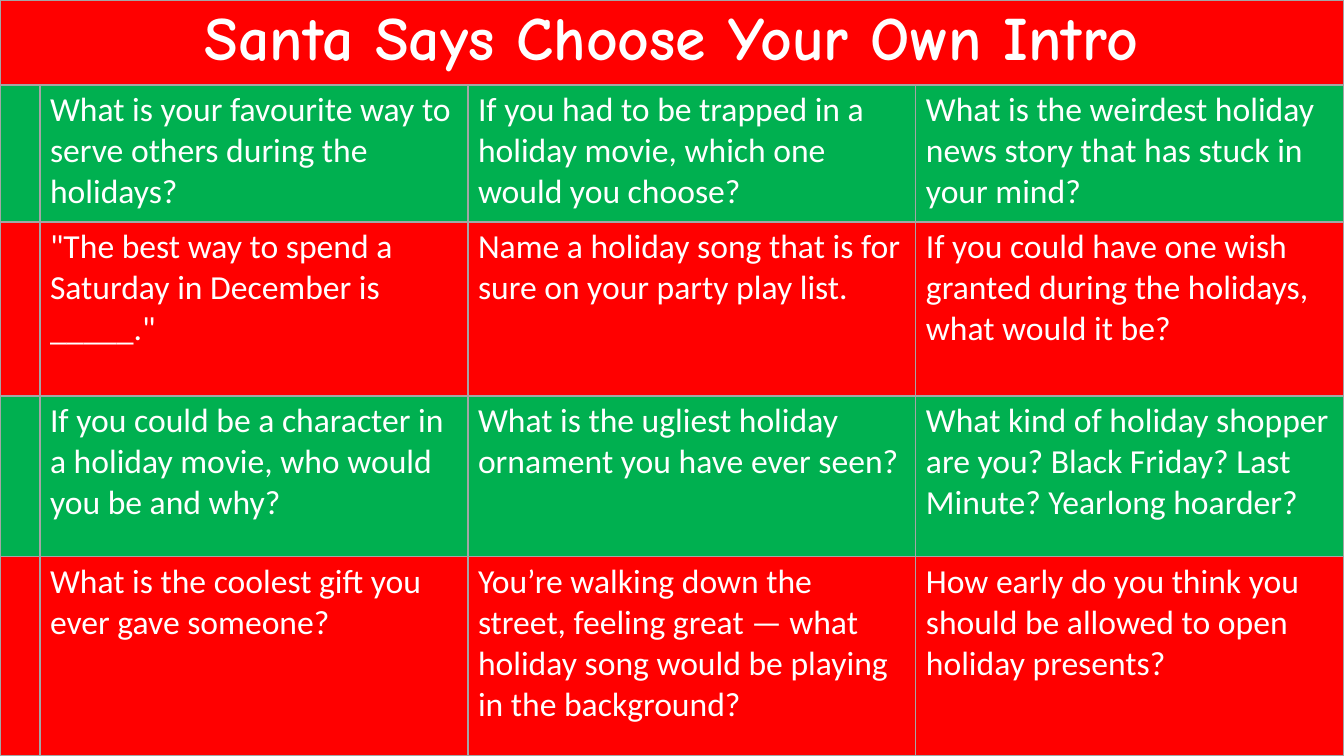
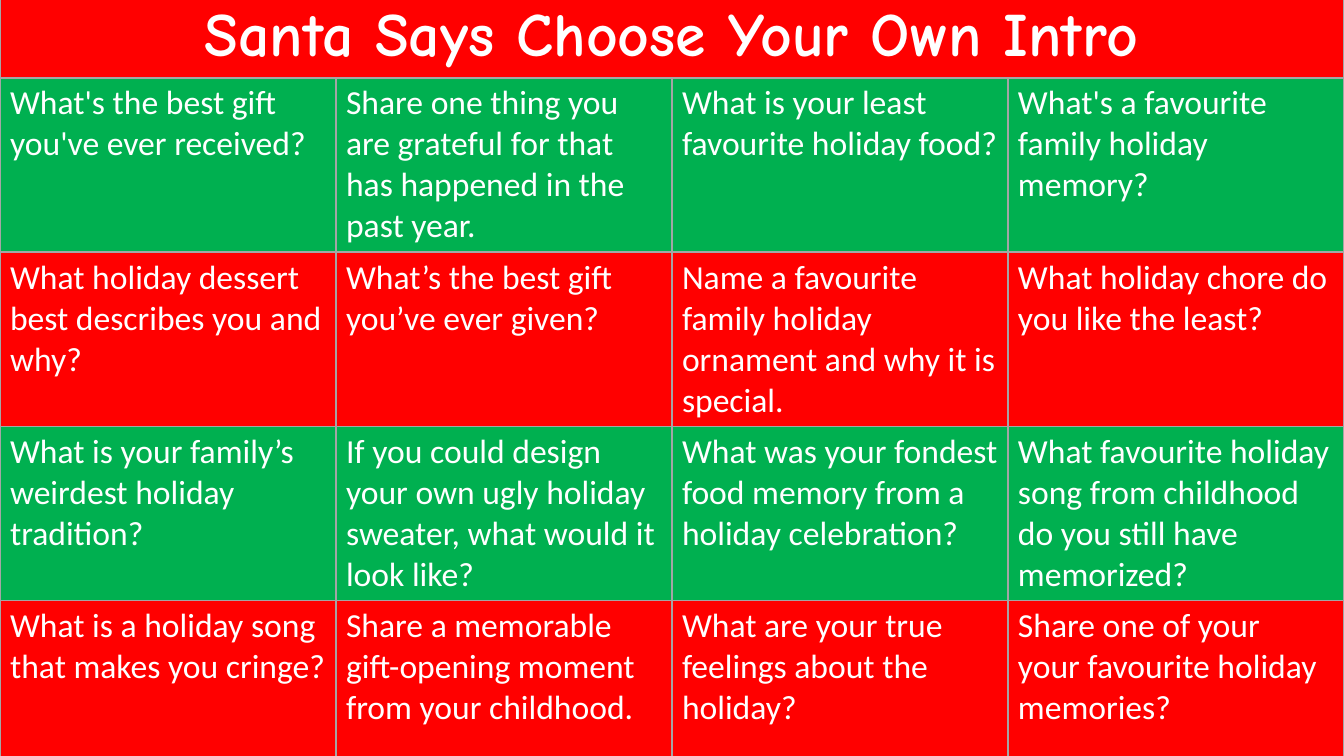
"""Build two holiday icebreaker grids as full-slide tables."""
from dataclasses import dataclass

from lxml.etree import SubElement as Sub
from pptx import Presentation
from pptx.dml.color import RGBColor as Rgb
from pptx.enum.text import PP_ALIGN as Align
from pptx.oxml.ns import qn
from pptx.util import Emu, Pt


@dataclass(frozen=True)
class Theme:
    red: str = "FF0000"
    green: str = "00B050"
    white: str = "FFFFFF"
    grey: str = "A5A5A5"
    head: str = "Comic Neue"
    body: str = "Calibri"
    big: int = 44
    text: int = 24
    line: int = 1


theme = Theme()
WIDE, HIGH = 1344, 756
TITLE = "Santa Says Choose Your Own Intro"


def px(count):
    return Emu(round(count * 12192000 / WIDE))


def write(cell, text, *, font=theme.body, size=theme.text, bold=False, align=Align.LEFT):
    par = cell.text_frame.paragraphs[0]
    par.text = text
    par.alignment = align
    for run in par.runs:
        run.font.name = font
        run.font.size = Pt(size)
        run.font.bold = bold
        run.font.color.rgb = Rgb.from_string(theme.white)


grids = [
    {
        "top": 0,
        "cols": [40, 428, 448, 428],
        "rows": [85, 137, 174, 161, 199],
        "asks": [
            ["", "What is your favourite way to serve others during the holidays?",
             "If you had to be trapped in a holiday movie, which one would you choose?",
             "What is the weirdest holiday news story that has stuck in your mind?"],
            ["", '"The best way to spend a Saturday in December is _____."',
             "Name a holiday song that is for sure on your party play list.",
             "If you could have one wish granted during the holidays, what would it be?"],
            ["", "If you could be a character in a holiday movie, who would you be and why?",
             "What is the ugliest holiday ornament you have ever seen?",
             "What kind of holiday shopper are you? Black Friday? Last Minute? Yearlong hoarder?"],
            ["", "What is the coolest gift you ever gave someone?",
             "You’re walking down the street, feeling great — what holiday song would be "
             "playing in the background?",
             "How early do you think you should be allowed to open holiday presents?"],
        ],
    },
    {
        "top": -4,
        "cols": [WIDE // 4] * 4,
        "rows": [82] + [169] * 4,
        "asks": [
            ["What's the best gift you've ever received?",
             "Share one thing you are grateful for that has happened in the past year.",
             "What is your least favourite holiday food?",
             "What's a favourite family holiday memory?"],
            ["What holiday dessert best describes you and why?",
             "What’s the best gift you’ve ever given?",
             "Name a favourite family holiday ornament and why it is special.",
             "What holiday chore do you like the least?"],
            ["What is your family’s weirdest holiday tradition?",
             "If you could design your own ugly holiday sweater, what would it look like?",
             "What was your fondest food memory from a holiday celebration?",
             "What favourite holiday song from childhood do you still have memorized?"],
            ["What is a holiday song that makes you cringe?",
             "Share a memorable gift-opening moment from your childhood.",
             "What are your true feelings about the holiday?",
             "Share one of your\nyour favourite holiday memories?"],
        ],
    },
]

deck = Presentation()
deck.slide_width, deck.slide_height = px(WIDE), px(HIGH)

for grid in grids:
    slide = deck.slides.add_slide(deck.slide_layouts[6])
    cols, rows = grid["cols"], grid["rows"]
    frame = slide.shapes.add_table(
        len(rows), len(cols), 0, px(grid["top"]), px(sum(cols)), px(sum(rows)))
    table = frame.table
    table.first_row = table.horz_banding = False
    for col, width in zip(table.columns, cols):
        col.width = px(width)
    for row, height in zip(table.rows, rows):
        row.height = px(height)

    for num, row in enumerate(table.rows):
        for cell in row.cells:
            props = cell._tc.get_or_add_tcPr()
            for side in ("lnL", "lnR", "lnT", "lnB"):
                edge = Sub(props, qn(f"a:{side}"), w=str(Pt(theme.line)))
                Sub(Sub(edge, qn("a:solidFill")), qn("a:srgbClr"), val=theme.grey)
            cell.fill.solid()
            cell.fill.fore_color.rgb = Rgb.from_string(theme.green if num % 2 else theme.red)

    title = table.cell(0, 0)
    title.merge(table.cell(0, len(cols) - 1))
    write(title, TITLE, font=theme.head, size=theme.big, bold=True, align=Align.CENTER)
    for num, asks in enumerate(grid["asks"], 1):
        for col, ask in enumerate(asks):
            if ask:
                write(table.cell(num, col), ask)

deck.save("out.pptx")
